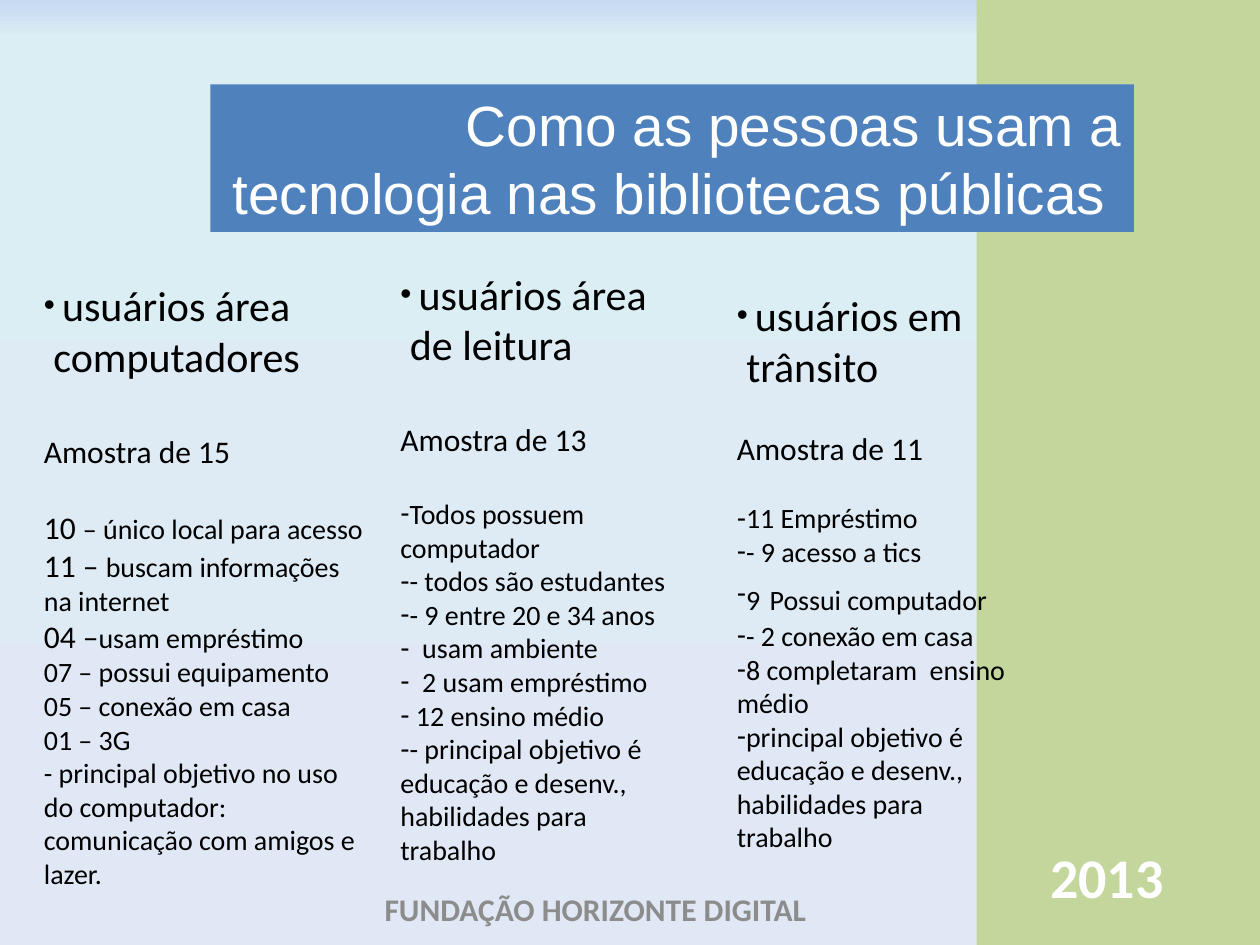
"""Build a slide on how people use technology in public libraries."""
from copy import deepcopy

from lxml.etree import SubElement
from pptx import Presentation
from pptx.dml.color import RGBColor
from pptx.enum.shapes import MSO_SHAPE
from pptx.enum.text import MSO_ANCHOR, MSO_AUTO_SIZE, PP_ALIGN
from pptx.oxml.ns import qn
from pptx.util import Inches, Pt


def color(value):
    return RGBColor.from_string(value)


def add_span(para, text, size, hue="000000", font="Calibri", bold=False):
    span = para.add_run()
    span.text = text
    span.font.size = Pt(size)
    span.font.name = font
    span.font.bold = bold
    span.font.color.rgb = color(hue)


deck = Presentation()
deck.slide_width, deck.slide_height = Inches(10), Inches(7.5)
page = deck.slides.add_slide(deck.slide_layouts[5])

backdrop = page.background.fill
backdrop.gradient()
backdrop.gradient_angle = 270
stop_list = page.element.find(".//" + qn("a:gsLst"))
stop_list.append(deepcopy(stop_list[0]))
stops = [(0, "C6D9F1"), (0.04, "DBEEF4"), (1, "E1E8F5")]
for stop, (position, hue) in zip(backdrop.gradient_stops, stops):
    stop.position = position
    stop.color.rgb = color(hue)

title = page.shapes.title
title.left, title.top = Inches(1.67), Inches(0.67)
title.width, title.height = Inches(7.33), Inches(1.17)
title.fill.solid()
title.fill.fore_color.rgb = color("4F81BD")
title.text_frame.word_wrap = True
title.text_frame.auto_size = MSO_AUTO_SIZE.NONE
title.text_frame.vertical_anchor = MSO_ANCHOR.MIDDLE
heading = title.text_frame.paragraphs[0]
heading.alignment = PP_ALIGN.RIGHT
add_span(heading, "Como as pessoas usam a tecnologia nas bibliotecas públicas ", 32.4, "FFFFFF", "Arial")

band = page.shapes.add_shape(MSO_SHAPE.RECTANGLE, Inches(7.75), 0, Inches(2.25), Inches(7.5))
band.shadow.inherit = False
band.fill.solid()
band.fill.fore_color.rgb = color("C3D69B")
band.line.fill.background()
title.element.addprevious(band.element)

labels = [
    (7.67, 6.75, 2.33, 0.4, "2013 ", 32, "FFFFFF"),
    (2.33, 6.92, 4.79, 0.58, "FUNDAÇÃO HORIZONTE DIGITAL", 18, "8C8C8C"),
]
for left, top, width, height, text, size, hue in labels:
    box = page.shapes.add_textbox(Inches(left), Inches(top), Inches(width), Inches(height))
    box.text_frame.word_wrap = True
    box.text_frame.vertical_anchor = MSO_ANCHOR.MIDDLE
    para = box.text_frame.paragraphs[0]
    para.alignment = PP_ALIGN.CENTER
    add_span(para, text, size, hue, bold=True)

goal = "principal objetivo é educação e desenv., habilidades para trabalho"
columns = [
    (0.25, 2.17, 2.75, 5.28, "usuários área", " computadores", "Amostra de 15", 29.3, 22, "", [
        [("10 ", 18), ("– único local para acesso", 16)],
        [("11 – ", 18), ("buscam informações  na internet", 16)],
        [("04 –", 18), ("usam empréstimo", 16)],
        [("07 – possui equipamento", 16)],
        [("05 – conexão em casa", 16)],
        [("01 – 3G", 16)],
        [("- principal objetivo no uso do computador: comunicação com amigos e lazer.", 16)],
    ]),
    (3.08, 2.08, 2.33, 5.76, "usuários área", " de leitura", "Amostra de 13", 29.3, 22, "-", [
        [("Todos possuem computador", 16)],
        [("- todos são estudantes", 16)],
        [("- 9 entre 20 e 34 anos", 16)],
        [("  usam ambiente", 16)],
        [("  2 usam empréstimo", 16)],
        [(" 12 ensino médio", 16)],
        [("- " + goal, 16)],
    ]),
    (5.75, 2.25, 2.33, 4.61, "usuários em", " trânsito", "Amostra de 11", 22, 19.5, "-", [
        [("11 Empréstimo", 16)],
        [("- 9 acesso a tics", 16)],
        [("9", 16), (" ", 24), ("Possui computador", 16)],
        [("- 2 conexão em casa", 16)],
        [("8 completaram  ensino médio", 16)],
        [(goal, 16)],
    ]),
]
for left, top, width, height, group, place, sample, sample_gap, list_gap, mark, findings in columns:
    box = page.shapes.add_textbox(Inches(left), Inches(top), Inches(width), Inches(height))
    frame = box.text_frame
    frame.word_wrap = True
    lines = [
        ("•", 0, [(" ", 18), (group, 24)]),
        ("", 0, [(place, 24)]),
        ("", sample_gap, [(sample, 18)]),
    ]
    lines += [(mark, 0 if index else list_gap, spans) for index, spans in enumerate(findings)]
    for index, (bullet, gap, spans) in enumerate(lines):
        para = frame.add_paragraph() if index else frame.paragraphs[0]
        para.space_before = Pt(gap)
        if bullet:
            properties = para._p.get_or_add_pPr()
            SubElement(properties, qn("a:buFont"), typeface="Arial")
            SubElement(properties, qn("a:buChar"), char=bullet)
        for text, size in spans:
            add_span(para, text, size)

deck.save("out.pptx")
